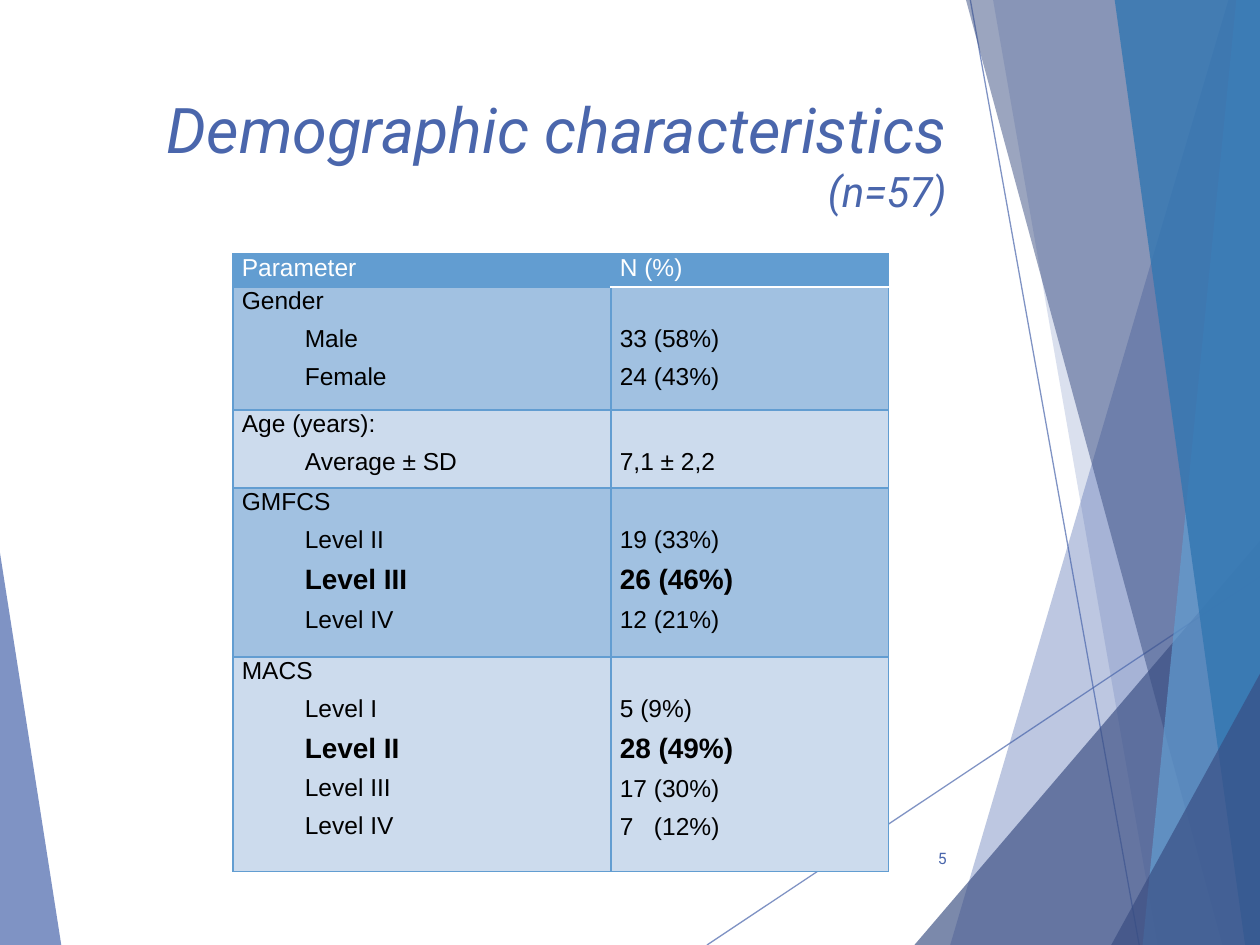
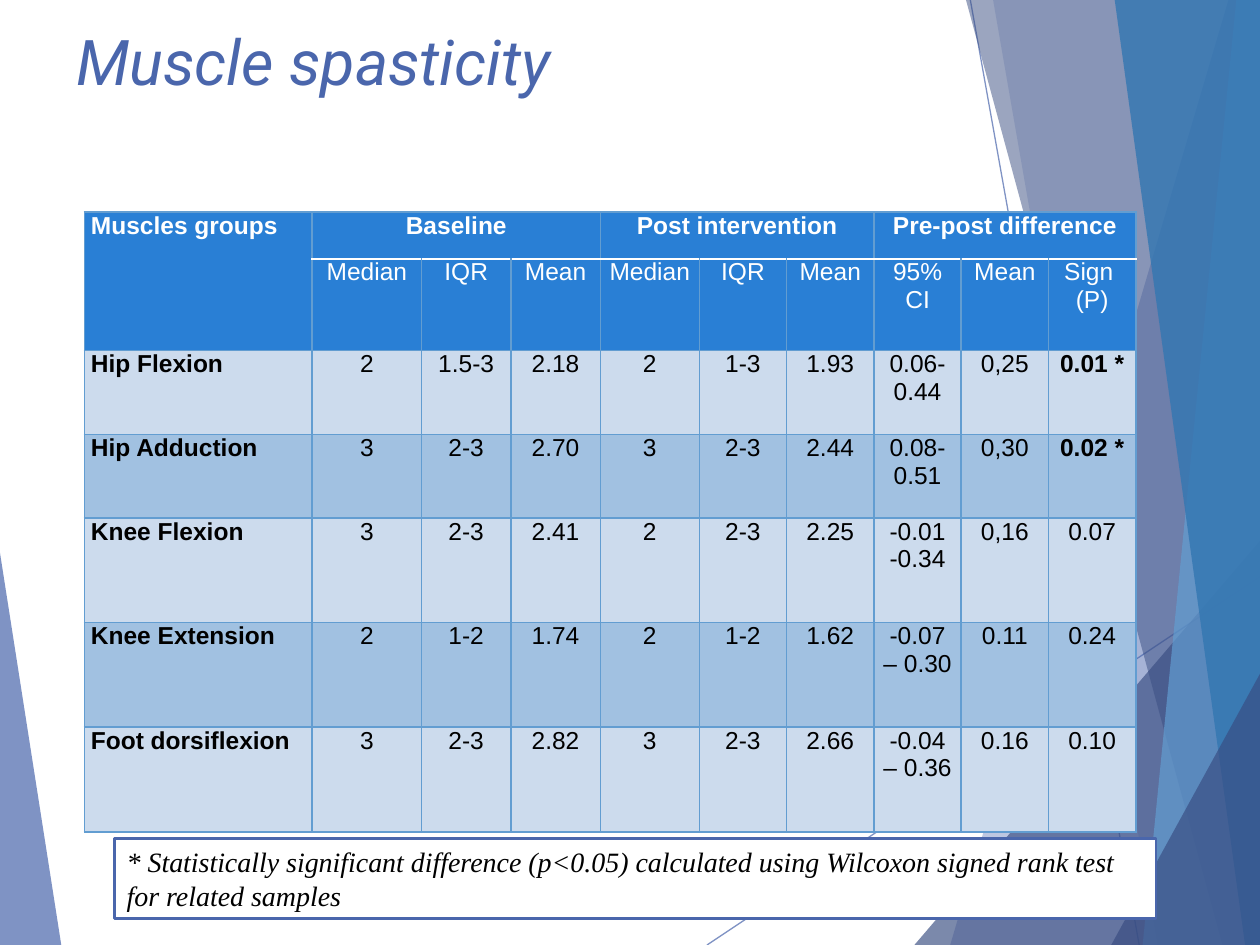
from lxml import etree
from pptx import Presentation
from pptx.dml.color import RGBColor as Rgb
from pptx.enum.shapes import MSO_CONNECTOR as Connector, MSO_SHAPE as Shape
from pptx.enum.text import MSO_ANCHOR as Anchor, PP_ALIGN as Align
from pptx.oxml.ns import qn
from pptx.util import Pt

COLORS = {
    "blue": "4A66AC",
    "navy": "384C81",
    "sky": "629DD1",
    "ocean": "3477B2",
    "header": "297FD5",
    "band_dark": "A1C1E1",
    "band_light": "CCDBED",
    "white": "FFFFFF",
    "black": "000000",
}

FACETS_BACK = [("blue", 70, [(0, 316), (35, 540), (0, 540)])]
FACETS_FRONT = [
    ("blue", 36, [(702, 0), (543, 540), (720, 540), (720, 0)]),
    ("blue", 20, [(567.5, 0), (661.5, 540), (720, 540), (720, 0)]),
    ("navy", 66, [(522.5, 540), (720, 309), (720, 540)]),
    ("navy", 50, [(552, 0), (698.5, 540), (720, 540), (720, 0)]),
    ("sky", 70, [(706.5, 0), (653, 540), (720, 540), (720, 0)]),
    ("ocean", 82, [(637, 0), (711.5, 540), (720, 540), (720, 0)]),
    ("navy", 66, [(635, 540), (720, 385), (720, 540)]),
]
RAYS = [(404, 540, 720, 329.5), (554.5, 0, 651, 540)]

TITLES = [
    ((48, 48, 500, 104), Align.RIGHT, [("Demographic characteristics\n", 36), ("(n=57)", 24)]),
    ((36.5, 9.5, 538.5, 96.5), Align.LEFT, [("Muscle spasticity", 36)]),
]

DEMOGRAPHICS = [
    ("Gender", [("Male", "33 (58%)"), ("Female", "24 (43%)")]),
    ("Age (years):", [("Average ± SD", "7,1 ± 2,2")]),
    ("GMFCS", [("Level II", "19 (33%)"), ("Level III", "26 (46%)"), ("Level IV", "12 (21%)")]),
    ("MACS", [("Level I", "5 (9%)"), ("Level II", "28 (49%)"), ("Level III", "17 (30%)"),
              ("Level IV", "7\t(12%)")]),
]
HIGHLIGHTS = {"26 (46%)", "28 (49%)"}

SPASTICITY = [
    ["Muscles groups", "Baseline", "", "", "Post intervention", "", "", "Pre-post difference", "", ""],
    ["", "Median", "IQR", "Mean", "Median", "IQR", "Mean", "95% CI", "Mean", "Sign \n(P)"],
    ["Hip Flexion", "2", "1.5-3", "2.18", "2", "1-3", "1.93", "0.06- 0.44", "0,25", "0.01 *"],
    ["Hip Adduction", "3", "2-3", "2.70", "3", "2-3", "2.44", "0.08-0.51", "0,30", "0.02 *"],
    ["Knee Flexion", "3", "2-3", "2.41", "2", "2-3", "2.25", "-0.01 -0.34", "0,16", "0.07"],
    ["Knee Extension", "2", "1-2", "1.74", "2", "1-2", "1.62", "-0.07 – 0.30", "0.11", "0.24"],
    ["Foot dorsiflexion", "3", "2-3", "2.82", "3", "2-3", "2.66", "-0.04 – 0.36", "0.16", "0.10"],
]


def write(para, text, size, font="Arial", color="black", bold=False, italic=False):
    for index, part in enumerate(text.split("\n")):
        if index:
            para.add_line_break()
        if not part:
            continue
        span = para.add_run()
        span.text = part
        span.font.size = Pt(size)
        span.font.name = font
        span.font.bold = bold
        span.font.italic = italic
        span.font.color.rgb = Rgb.from_string(COLORS[color])


def make_table(page, place, widths, heights, margin, fills):
    left, top = place
    table = page.shapes.add_table(len(heights), len(widths), Pt(left), Pt(top),
                                  Pt(sum(widths)), Pt(sum(heights))).table
    for column, width in zip(table.columns, widths):
        column.width = Pt(width)
    for row, height in zip(table.rows, heights):
        row.height = Pt(height)
    for r, fill in enumerate(fills):
        for c in range(len(widths)):
            cell = table.cell(r, c)
            cell.margin_left = cell.margin_right = Pt(margin)
            cell.margin_top = cell.margin_bottom = 0
            for side in "LRTB":
                white = c > 0 and (r, side) in [(0, "B"), (1, "T")]
                thick = white or (c, side) in [(0, "R"), (1, "L")]
                line = etree.SubElement(cell._tc.get_or_add_tcPr(), qn("a:ln" + side),
                                        w=str(Pt(1.5 if thick else 1)))
                paint = etree.SubElement(line, qn("a:solidFill"))
                etree.SubElement(paint, qn("a:srgbClr"), val=COLORS["white" if white else "sky"])
            cell.fill.solid()
            cell.fill.fore_color.rgb = Rgb.from_string(COLORS[fill])
    return table


deck = Presentation()
deck.slide_width, deck.slide_height = Pt(720), Pt(540)
pages = []

for place, align, title_parts in TITLES:
    page = deck.slides.add_slide(deck.slide_layouts[6])
    pages.append(page)
    for facets, rays in [(FACETS_BACK, RAYS), (FACETS_FRONT, [])]:
        for color, opacity, points in facets:
            corners = [(Pt(x), Pt(y)) for x, y in points]
            builder = page.shapes.build_freeform(*corners[0])
            builder.add_line_segments(corners[1:], close=True)
            facet = builder.convert_to_shape()
            facet.shadow.inherit = False
            facet.line.fill.background()
            facet.fill.solid()
            facet.fill.fore_color.rgb = Rgb.from_string(COLORS[color])
            tone = facet._element.spPr.find(".//" + qn("a:srgbClr"))
            etree.SubElement(tone, qn("a:alpha"), val=str(opacity * 1000))
        for ends in rays:
            ray = page.shapes.add_connector(Connector.STRAIGHT, *[Pt(value) for value in ends])
            ray.line.width = Pt(0.75)
            ray.line.color.rgb = Rgb.from_string(COLORS["blue"])
            tone = ray._element.spPr.find(".//" + qn("a:srgbClr"))
            etree.SubElement(tone, qn("a:alpha"), val="70000")
            etree.SubElement(ray._element.spPr, qn("a:effectLst"))
    title = page.shapes.add_textbox(*[Pt(value) for value in place]).text_frame
    title.word_wrap = True
    title.paragraphs[0].alignment = align
    for text, size in title_parts:
        write(title.paragraphs[0], text, size, "Roboto", "blue", italic=True)

demographics_page, spasticity_page = pages

number = demographics_page.shapes.add_textbox(Pt(507.5), Pt(476), Pt(40.5), Pt(29)).text_frame
number.vertical_anchor = Anchor.MIDDLE
number.word_wrap = True
number.paragraphs[0].alignment = Align.RIGHT
write(number.paragraphs[0], "5", 9, "Roboto", "blue")

table = make_table(demographics_page, (133.2, 145.2), [216, 158.4], [18.8, 70.3, 44.6, 96.5, 122.6],
                   5, ["sky"] + ["band_dark", "band_light"] * 2)
for c, heading in enumerate(["Parameter", "N (%)"]):
    write(table.cell(0, c).text_frame.paragraphs[0], heading, 14, color="white")
for r, (group, entries) in enumerate(DEMOGRAPHICS, 1):
    names, values = table.cell(r, 0), table.cell(r, 1)
    values.margin_top = Pt(22)
    write(names.text_frame.paragraphs[0], group, 14)
    names.text_frame.paragraphs[0].space_after = Pt(6)
    for index, (name, value) in enumerate(entries):
        strong = value in HIGHLIGHTS
        size = 16 if strong else 14
        name_para = names.text_frame.add_paragraph()
        value_para = values.text_frame.add_paragraph() if index else values.text_frame.paragraphs[0]
        name_para._p.get_or_add_pPr().set("marL", str(Pt(36)))
        if index < len(entries) - 1:
            name_para.space_after = value_para.space_after = Pt(6)
        if "\t" in value:
            tabs = etree.SubElement(value_para._p.get_or_add_pPr(), qn("a:tabLst"))
            etree.SubElement(tabs, qn("a:tab"), pos=str(Pt(19.5)), algn="l")
        write(name_para, name, size, bold=strong)
        write(value_para, value, size, bold=strong)

table = make_table(spasticity_page, (48.2, 121), [130.3, 62.4, 51.1, 51.1, 56.6] + [49.9] * 5,
                   [26.8, 52.6, 47.8, 47.8, 59.8, 59.8, 59.8], 3.75,
                   ["header"] * 2 + ["band_light", "band_dark"] * 2 + ["band_light"])
table.cell(0, 0).merge(table.cell(1, 0))
for c in (1, 4, 7):
    table.cell(0, c).merge(table.cell(0, c + 2))
for r, texts in enumerate(SPASTICITY):
    for c, text in enumerate(texts):
        if not text:
            continue
        para = table.cell(r, c).text_frame.paragraphs[0]
        para.alignment = Align.CENTER if c else Align.LEFT
        strong = r == 0 or c == 0 or text.endswith("*")
        write(para, text, 14, color="white" if r < 2 else "black", bold=strong)

note = spasticity_page.shapes.add_shape(Shape.RECTANGLE, Pt(65.3), Pt(479), Pt(595.4), Pt(46))
note.shadow.inherit = False
note.fill.solid()
note.fill.fore_color.rgb = Rgb.from_string(COLORS["white"])
note.line.color.rgb = Rgb.from_string(COLORS["blue"])
note.line.width = Pt(1.5)
note.text_frame.word_wrap = True
note.text_frame.vertical_anchor = Anchor.TOP
note.text_frame.paragraphs[0].alignment = Align.LEFT
write(note.text_frame.paragraphs[0],
      "* Statistically significant difference (p<0.05) calculated using Wilcoxon signed rank test "
      "for related samples", 16, "Times New Roman", italic=True)

deck.save("out.pptx")
